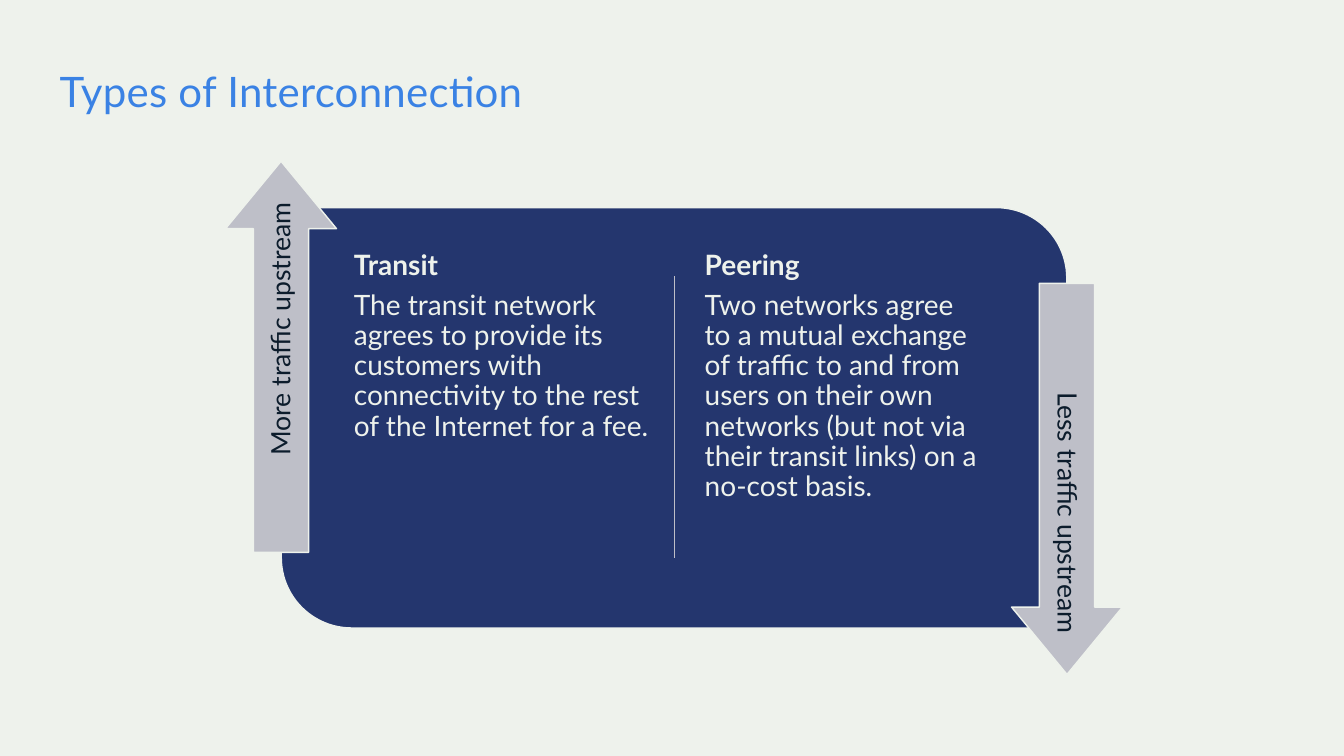
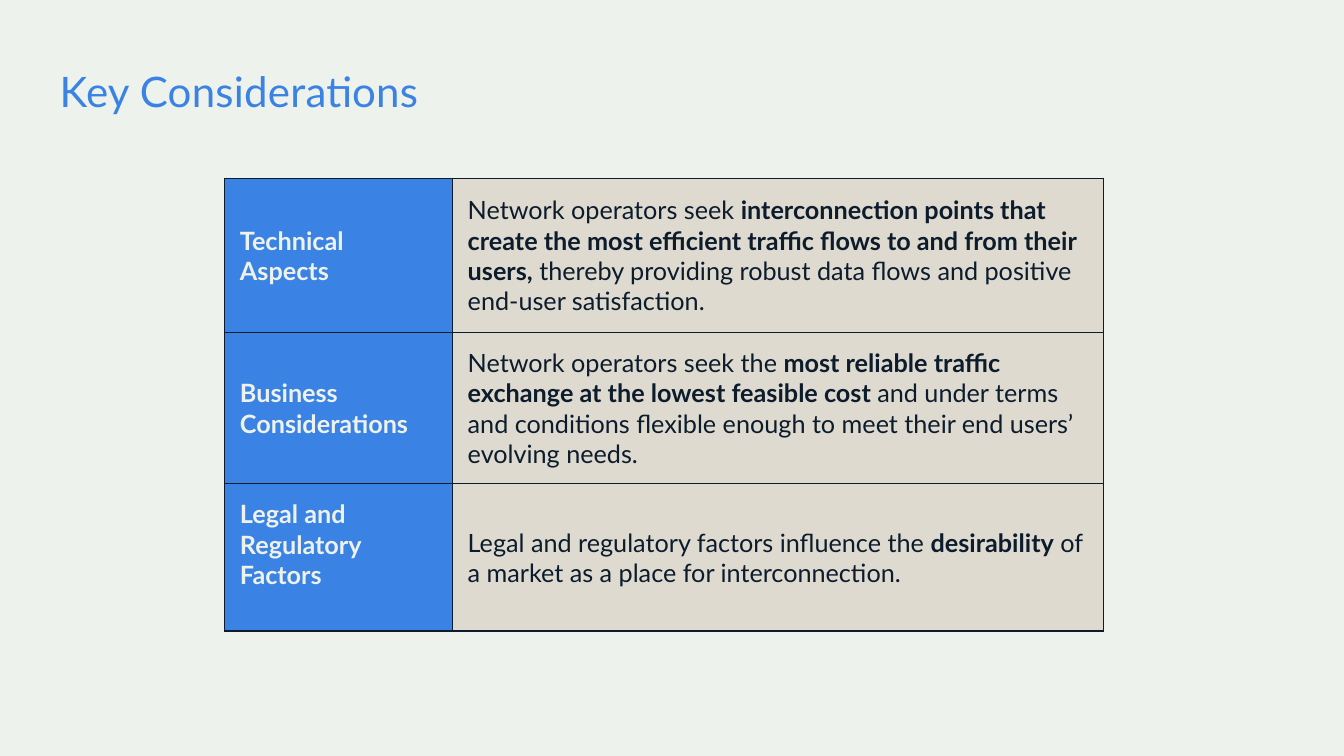
from lxml import etree
from pptx import Presentation
from pptx.dml.color import RGBColor
from pptx.enum.shapes import MSO_CONNECTOR, MSO_SHAPE
from pptx.enum.text import MSO_ANCHOR, PP_ALIGN
from pptx.oxml.ns import qn
from pptx.util import Inches, Pt

# Shared look
FONT = "Lato"
PAPER, BLUE, NAVY = "EEF2EC", "3A82E4", "24366E"
GREY, SAND, INK = "BEBFC8", "DEDAD0", "0C1C2C"
WIDTH, HEIGHT = Inches(13.33), Inches(7.5)

# Interconnection panel: centre and size, in percent of the slide
MID_X, MID_Y = 50.15, 55.27
PANEL_W, PANEL_H = 58.44, 55.6

COLUMNS = [
    (25.73, 24.08, "Transit",
     "The transit network agrees to provide its customers with "
     "connectivity to the rest of the Internet for a fee."),
    (51.84, 21.53, "Peering",
     "Two networks agree to a mutual exchange of traffic to and from users "
     "on their own networks (but not via their transit links) on a "
     "no-cost basis."),
]

# Asterisks enclose bold words
CONSIDERATIONS = [
    ("*Technical\vAspects*",
     "Network operators seek *interconnection points that create the most "
     "efficient traffic flows to and from their users,* thereby providing "
     "robust data flows and positive end-user satisfaction."),
    ("*Business Considerations*",
     "Network operators seek the *most reliable traffic exchange at the "
     "lowest feasible cost* and under terms and conditions flexible enough "
     "to meet their end users’ evolving needs."),
    ("*Legal and Regulatory Factors*",
     "Legal and regulatory factors influence the *desirability* of a market "
     "as a place for interconnection."),
]
TABLE_COLS = (16.95, 48.46)
TABLE_ROWS = (20.4, 20, 19.47)


def across(percent):
    return round(WIDTH * percent / 100)


def down(percent):
    return round(HEIGHT * percent / 100)


def rgb(color):
    return RGBColor.from_string(color)


def box(left, top, width, height):
    return across(left), down(top), across(width), down(height)


def centred(x, y, width, height):
    """Box around a centre; width and height are already lengths."""
    return across(x) - width // 2, down(y) - height // 2, width, height


def write(tf, text, size=20, color=INK, align=PP_ALIGN.LEFT, inset=0.08,
          anchor=MSO_ANCHOR.TOP, line=None, after=None, spacing=None):
    """Fill a text frame; newlines split paragraphs, asterisks mark bold."""
    tf.word_wrap = True
    tf.vertical_anchor = anchor
    tf.margin_left = tf.margin_right = Inches(inset)
    tf.margin_top = tf.margin_bottom = Inches(inset)
    for i, content in enumerate(text.split("\n")):
        p = tf.add_paragraph() if i else tf.paragraphs[0]
        p.alignment = align
        p.line_spacing = line
        p.space_after = after
        for j, part in enumerate(content.split("*")):
            for k, piece in enumerate(part.split("\v")):
                if k:
                    p.add_line_break()
                if not piece:
                    continue
                r = p.add_run()
                r.text = piece
                r.font.name = FONT
                r.font.size = Pt(size)
                r.font.bold = j % 2 == 1
                r.font.color.rgb = rgb(color)
                if spacing:
                    r.font._element.set("spc", str(spacing))


def add_slide(prs, title):
    slide = prs.slides.add_slide(prs.slide_layouts[5])
    sp = slide.shapes.title
    sp.left, sp.top, sp.width, sp.height = box(4.43, 8.27, 91.22, 7.87)
    write(sp.text_frame, title, size=30, color=BLUE, inset=0, line=1.06,
          spacing=20)
    return slide


def add_text(slide, place, text, rotation=0, **style):
    sp = slide.shapes.add_textbox(*place)
    sp.rotation = rotation
    write(sp.text_frame, text, line=0.9, after=Pt(7), **style)


def add_shape(slide, kind, place, fill, adjustments, rotation=0):
    sp = slide.shapes.add_shape(kind, *place)
    sp.shadow.inherit = False
    sp.rotation = rotation
    sp.fill.solid()
    sp.fill.fore_color.rgb = rgb(fill)
    sp.line.color.rgb = rgb(PAPER)
    sp.line.width = Pt(1)
    for i, value in enumerate(adjustments):
        sp.adjustments[i] = value


def add_divider(slide, x, top, bottom):
    line = slide.shapes.add_connector(
        MSO_CONNECTOR.STRAIGHT, across(x), down(top), across(x), down(bottom))
    line.line.color.rgb = rgb(GREY)
    line.line.width = Pt(1)
    etree.SubElement(line._element.spPr, qn("a:effectLst"))


def add_traffic_arrow(slide, side, label):
    """Side -1 points up on the left, side 1 points down on the right."""
    rotation = 90 * side % 360
    place = centred(MID_X + 29.24 * side, MID_Y + 8.07 * side,
                    down(51.73), down(14.67))
    add_shape(slide, MSO_SHAPE.RIGHT_ARROW, place, GREY, (0.498, 0.607),
              rotation)
    place = centred(MID_X + 29.18 * side, MID_Y + 5.87 * side,
                    down(47.33), down(7.33))
    add_text(slide, place, label, rotation, size=19, align=PP_ALIGN.RIGHT,
             anchor=MSO_ANCHOR.MIDDLE)


def set_borders(cell):
    tcPr = cell._tc.get_or_add_tcPr()
    for i, side in enumerate(("lnL", "lnR", "lnT", "lnB")):
        ln = etree.Element(qn(f"a:{side}"), w=str(Pt(1)))
        fill = etree.SubElement(ln, qn("a:solidFill"))
        etree.SubElement(fill, qn("a:srgbClr"), val=INK)
        tcPr.insert(i, ln)


def add_table(slide, left, top, rows):
    frame = slide.shapes.add_table(
        len(rows), len(TABLE_COLS),
        *box(left, top, sum(TABLE_COLS), sum(TABLE_ROWS)))
    table = frame.table
    table.first_row = table.horz_banding = False
    for column, width in zip(table.columns, TABLE_COLS):
        column.width = across(width)
    for row, height, texts in zip(table.rows, TABLE_ROWS, rows):
        row.height = down(height)
        for cell, text, fill, color in zip(row.cells, texts, (BLUE, SAND),
                                           (PAPER, INK)):
            cell.fill.solid()
            cell.fill.fore_color.rgb = rgb(fill)
            set_borders(cell)
            write(cell.text_frame, text, size=18, color=color)
            cell.vertical_anchor = MSO_ANCHOR.MIDDLE
            cell.margin_left = cell.margin_right = Inches(0.15)
            cell.margin_top = cell.margin_bottom = Inches(0.15)
    # The three-line heading starts at the top of its cell
    table.cell(len(rows) - 1, 0).vertical_anchor = MSO_ANCHOR.TOP


def build_interconnection(prs):
    slide = add_slide(prs, "Types of Interconnection")
    place = centred(MID_X, MID_Y, across(PANEL_W), down(PANEL_H))
    add_shape(slide, MSO_SHAPE.ROUND_2_DIAG_RECTANGLE, place, NAVY, (0, 0.167))
    add_divider(slide, 50.19, 36.53, 73.87)
    for left, width, heading, body in COLUMNS:
        add_text(slide, box(left, 32.13, width, 40.27),
                 f"*{heading}*\n{body}", color=PAPER)
    add_traffic_arrow(slide, -1, "More traffic upstream")
    add_traffic_arrow(slide, 1, "Less traffic upstream")


def build_considerations(prs):
    slide = add_slide(prs, "Key Considerations")
    add_table(slide, 16.73, 23.6, CONSIDERATIONS)


def main():
    prs = Presentation()
    prs.slide_width, prs.slide_height = WIDTH, HEIGHT
    background = prs.slide_master.background.fill
    background.solid()
    background.fore_color.rgb = rgb(PAPER)
    build_interconnection(prs)
    build_considerations(prs)
    prs.save("out.pptx")


if __name__ == "__main__":
    main()
